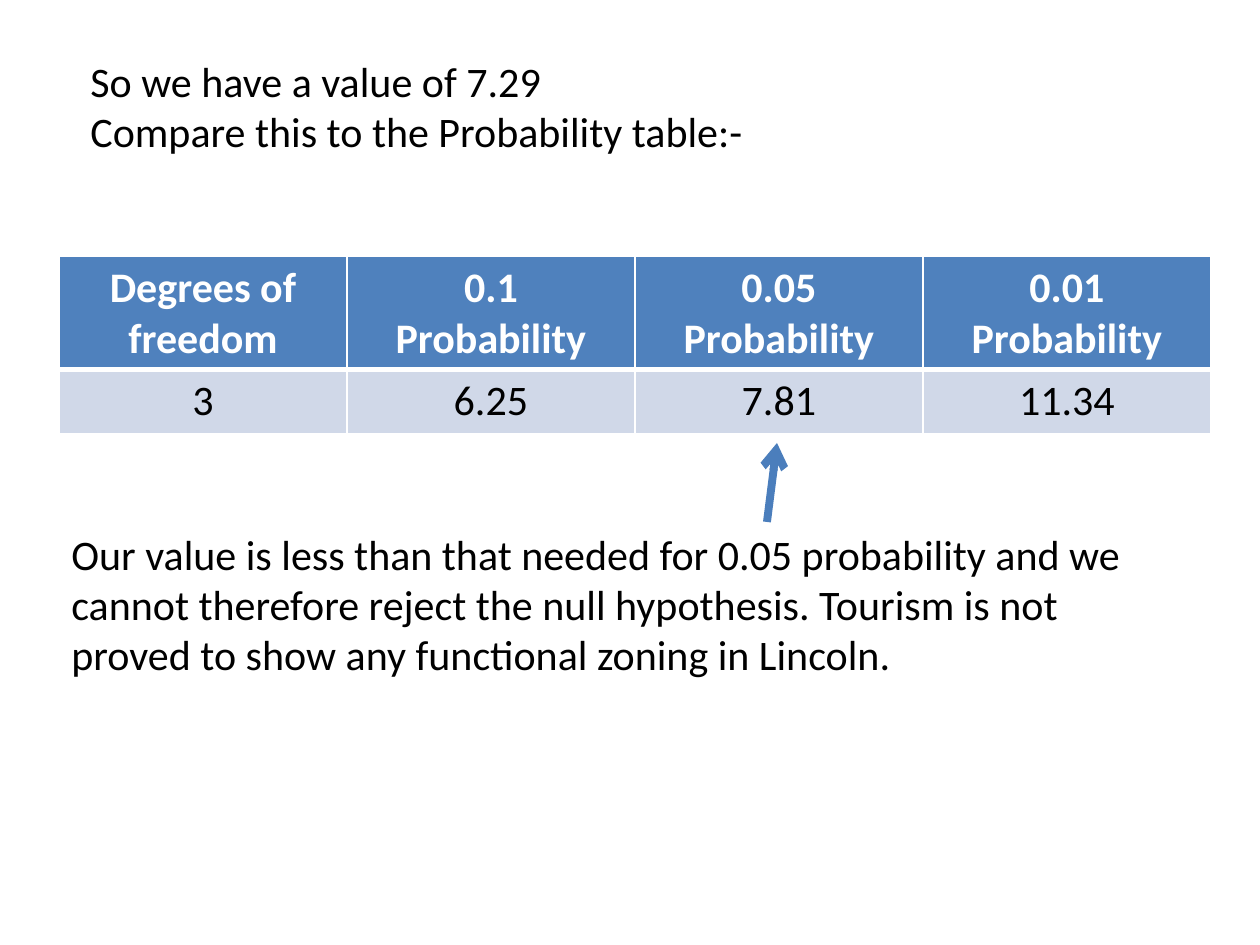
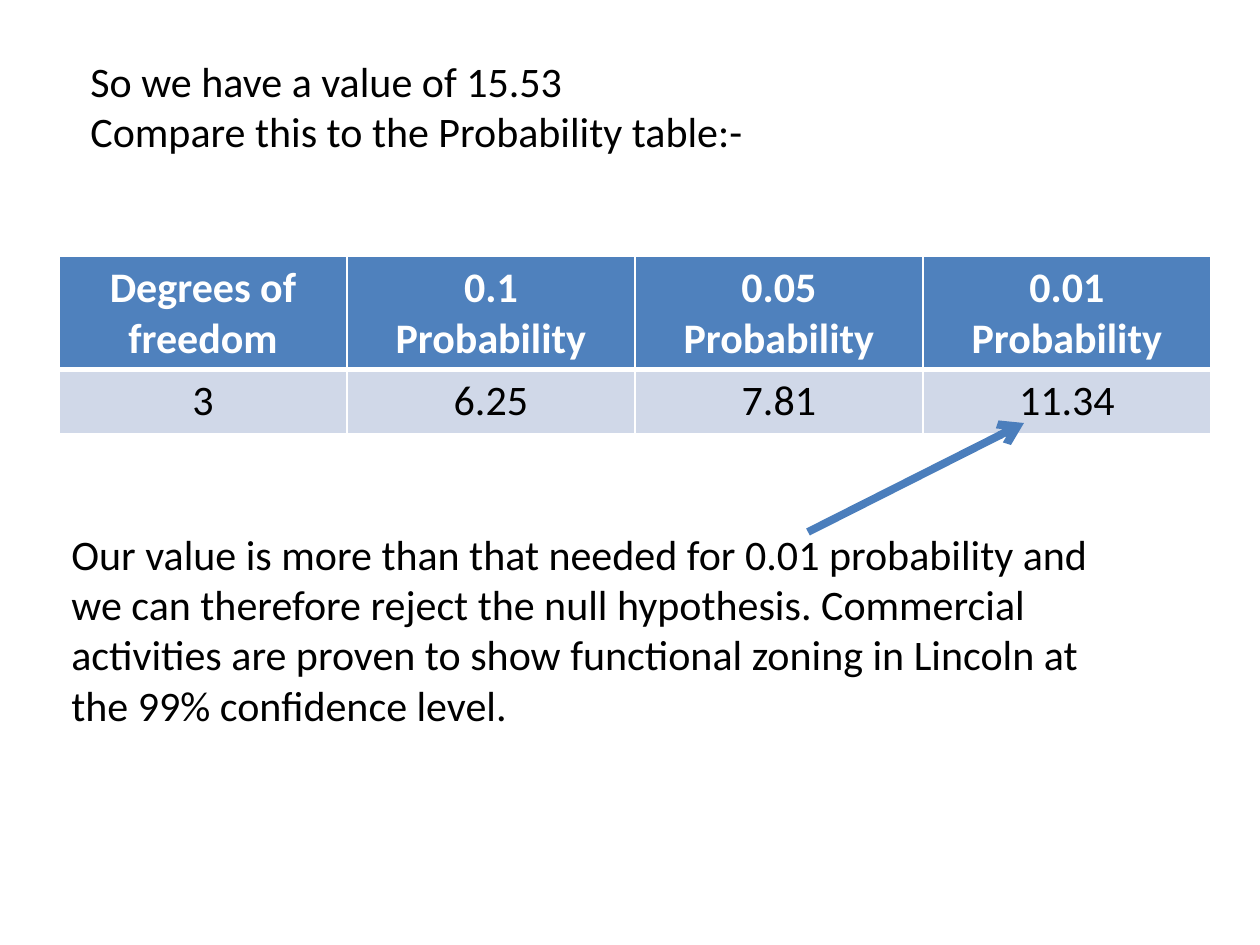
from lxml.etree import SubElement
from pptx import Presentation
from pptx.dml.color import RGBColor
from pptx.enum.shapes import MSO_CONNECTOR
from pptx.enum.text import MSO_ANCHOR, PP_ALIGN
from pptx.oxml.ns import qn
from pptx.util import Emu, Pt

# Shared look
FONT = "Calibri"
SIZE = 24
BLACK = RGBColor(0x00, 0x00, 0x00)
WHITE = RGBColor(0xFF, 0xFF, 0xFF)
HEADER_BLUE = RGBColor(0x4F, 0x81, 0xBD)
ROW_BLUE = RGBColor(0xD0, 0xD8, 0xE8)
ARROW_BLUE = RGBColor(0x4B, 0x7E, 0xBC)

# Probability table: each cell is a list of paragraphs
HEADER = [["Degrees of freedom"]] + [[level, "Probability"] for level in ("0.1", "0.05", "0.01")]
CRITICAL_VALUES = [["3"], ["6.25"], ["7.81"], ["11.34"]]
COLUMN_WIDTH = 288
ROW_HEIGHTS = (112, 64)
THIN, THICK = 1, 3

# Slide contents: value, conclusion, conclusion height, arrow start, arrow end
RESULTS = [
    ("7.29",
     "Our value is less than that needed for 0.05 probability and we cannot therefore "
     "reject the null hypothesis. Tourism is not proved to show any functional zoning "
     "in Lincoln.",
     165, (767, 522), (777, 443)),
    ("15.53",
     "Our value is more than that needed for 0.01 probability and we can therefore "
     "reject the null hypothesis. Commercial activities are proven to show functional "
     "zoning in Lincoln at the 99% confidence level.",
     217, (808, 532), (1024, 423)),
]


def px(n):
    return Emu(round(n * 914400 / 126))


def write(tf, lines, color=BLACK, bold=False, align=PP_ALIGN.LEFT):
    for i, line in enumerate(lines):
        p = tf.paragraphs[0] if i == 0 else tf.add_paragraph()
        p.alignment = align
        r = p.add_run()
        r.text = line
        r.font.name = FONT
        r.font.size = Pt(SIZE)
        r.font.bold = bold
        r.font.color.rgb = color


def add_text(s, x, y, w, h, lines):
    tf = s.shapes.add_textbox(px(x), px(y), px(w), px(h)).text_frame
    tf.word_wrap = True
    write(tf, lines)


def set_border(cell, side, width):
    ln = SubElement(cell._tc.get_or_add_tcPr(), qn(f"a:ln{side}"), w=str(Pt(width)))
    fill = SubElement(ln, qn("a:solidFill"))
    SubElement(fill, qn("a:srgbClr"), val=str(WHITE))


def style_cell(cell, lines, is_header):
    # Borders precede the fill in the cell properties
    widths = {"L": THIN, "R": THIN,
              "T": THIN if is_header else THICK,
              "B": THICK if is_header else THIN}
    for side, width in widths.items():
        set_border(cell, side, width)
    cell.fill.solid()
    cell.fill.fore_color.rgb = HEADER_BLUE if is_header else ROW_BLUE
    cell.vertical_anchor = MSO_ANCHOR.TOP
    write(cell.text_frame, lines, WHITE if is_header else BLACK, is_header, PP_ALIGN.CENTER)


def add_probability_table(s, x, y):
    rows = (HEADER, CRITICAL_VALUES)
    table = s.shapes.add_table(len(rows), len(HEADER), px(x), px(y),
                               px(COLUMN_WIDTH * len(HEADER)), px(sum(ROW_HEIGHTS))).table
    for column in table.columns:
        column.width = px(COLUMN_WIDTH)
    for i, row in enumerate(rows):
        table.rows[i].height = px(ROW_HEIGHTS[i])
        for j, lines in enumerate(row):
            style_cell(table.cell(i, j), lines, i == 0)


def add_arrow(s, start, end):
    line = s.shapes.add_connector(MSO_CONNECTOR.STRAIGHT, *map(px, start + end))
    line.line.color.rgb = ARROW_BLUE
    line.line.width = Pt(4.5)
    SubElement(line.line._get_or_add_ln(), qn("a:tailEnd"), type="arrow")
    SubElement(line._element.spPr, qn("a:effectLst"))


def add_result_slide(prs, value, conclusion, height, start, end):
    s = prs.slides.add_slide(prs.slide_layouts[6])
    add_text(s, 78, 49, 738, 115,
             [f"So we have a value of {value}", "Compare this to the Probability table:-"])
    add_probability_table(s, 59, 256)
    add_text(s, 59, 522, 1092, height, [conclusion])
    add_arrow(s, start, end)


def main():
    prs = Presentation()
    prs.slide_width, prs.slide_height = px(1260), px(945)
    for result in RESULTS:
        add_result_slide(prs, *result)
    prs.save("out.pptx")


if __name__ == "__main__":
    main()
